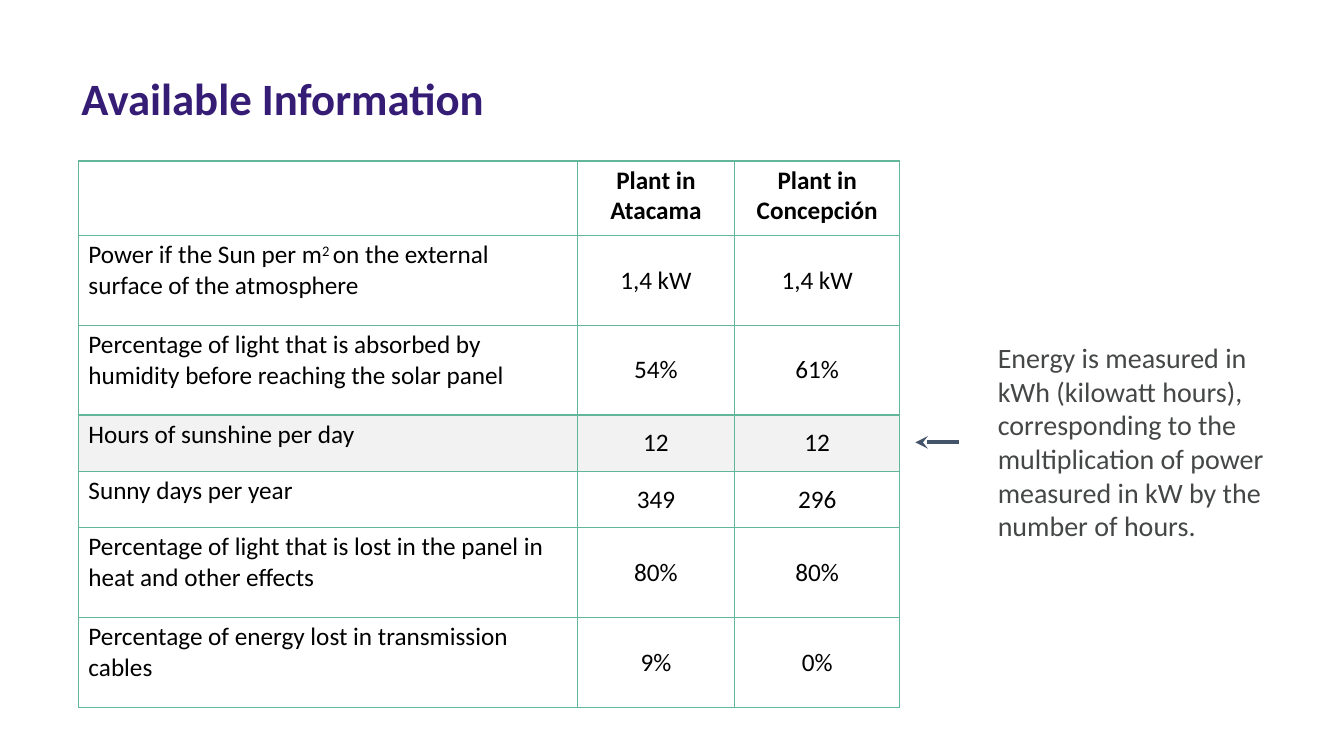
"""Build a slide with a table of solar plant data and a note on energy units."""
from lxml import etree
from pptx import Presentation
from pptx import util as u
from pptx.dml.color import RGBColor
from pptx.enum import shapes, text
from pptx.oxml.ns import qn

FONT = "Calibri"
BORDER = "62B799"
HIGHLIGHT = "F2F2F2"
HIGHLIGHTED_ROW = 3
COLUMN_WIDTHS = [356.4, 112.3, 118.1]
ROW_HEIGHTS = [53.3, 64.1, 64.1, 40.3, 40.3, 64.1, 64.1]
ROWS = [
    ("", "Plant in Atacama", "Plant in Concepción"),
    (["Power if the Sun per m", "2 ", "on the external surface of the atmosphere"],
     "1,4 kW", "1,4 kW"),
    ("Percentage of light that is absorbed by humidity before reaching the solar panel",
     "54%", "61%"),
    ("Hours of sunshine per day", "12", "12"),
    ("Sunny days per year", "349", "296"),
    ("Percentage of light that is lost in the panel in heat and other effects",
     "80%", "80%"),
    ("Percentage of energy lost in transmission cables", "9%", "0%"),
]
NOTE = ("Energy is measured in kWh (kilowatt hours), corresponding to the "
        "multiplication of power measured in kW by the number of hours.")


def color(hex_string):
    return RGBColor.from_string(hex_string)


def apply(target, values):
    for name, value in values.items():
        setattr(target, name, value)


def write(paragraph, content, size, hex_color, bold=False, align=text.PP_ALIGN.LEFT):
    paragraph.alignment = align
    apply(paragraph.font, {"name": FONT, "size": u.Pt(size), "bold": bold})
    paragraph.font.color.rgb = color(hex_color)
    pieces = [content] if isinstance(content, str) else content
    for index, piece in enumerate(pieces):
        run = paragraph.add_run()
        run.text = piece
        apply(run.font, {"name": FONT, "size": u.Pt(size), "bold": bold})
        run.font.color.rgb = color(hex_color)
        if index == 1:
            run.font._element.set("baseline", "30000")


def fill_text_box(shape, box, content, size, hex_color, bold=False):
    apply(shape, dict(zip(("left", "top", "width", "height"), map(u.Pt, box))))
    apply(shape.text_frame, {
        "word_wrap": True,
        "auto_size": text.MSO_AUTO_SIZE.SHAPE_TO_FIT_TEXT,
        "vertical_anchor": text.MSO_ANCHOR.TOP,
    })
    write(shape.text_frame.paragraphs[0], content, size, hex_color, bold)


def add_borders(cell):
    properties = cell._tc.get_or_add_tcPr()
    for side in ("a:lnL", "a:lnR", "a:lnT", "a:lnB"):
        line = etree.SubElement(properties, qn(side), w=str(u.Pt(1)))
        fill = etree.SubElement(line, qn("a:solidFill"))
        etree.SubElement(fill, qn("a:srgbClr"), val=BORDER)


def format_cell(cell, content, row, column):
    add_borders(cell)
    if row == HIGHLIGHTED_ROW:
        cell.fill.solid()
        cell.fill.fore_color.rgb = color(HIGHLIGHT)
    else:
        cell.fill.background()
    is_value = row > 0 and column > 0
    apply(cell, {
        "margin_left": u.Pt(7.2), "margin_right": u.Pt(7.2),
        "margin_top": u.Pt(2.9), "margin_bottom": u.Pt(2.9),
        "vertical_anchor": text.MSO_ANCHOR.MIDDLE if is_value else text.MSO_ANCHOR.TOP,
    })
    align = text.PP_ALIGN.CENTER if column else text.PP_ALIGN.LEFT
    write(cell.text_frame.paragraphs[0], content, 18, "000000", row == 0, align)


def add_data_table(slide, left, top):
    frame = slide.shapes.add_table(
        len(ROWS), len(COLUMN_WIDTHS), u.Pt(left), u.Pt(top),
        u.Pt(sum(COLUMN_WIDTHS)), u.Pt(sum(ROW_HEIGHTS)))
    table = frame.table
    apply(table, {"first_row": False, "horz_banding": False})
    for column, width in zip(table.columns, COLUMN_WIDTHS):
        column.width = u.Pt(width)
    for row, height in zip(table.rows, ROW_HEIGHTS):
        row.height = u.Pt(height)
    for row, contents in enumerate(ROWS):
        for column, content in enumerate(contents):
            format_cell(table.cell(row, column), content, row, column)


def add_arrow(slide, start, end, y, hex_color, width):
    arrow = slide.shapes.add_connector(
        shapes.MSO_CONNECTOR.STRAIGHT, u.Pt(start), u.Pt(y), u.Pt(end), u.Pt(y))
    arrow.line.width = u.Pt(width)
    arrow.line.color.rgb = color(hex_color)
    etree.SubElement(arrow.line._get_or_add_ln(), qn("a:tailEnd"), type="stealth")
    etree.SubElement(arrow._element.spPr, qn("a:effectLst"))


def main():
    presentation = Presentation()
    apply(presentation, {"slide_width": u.Pt(960), "slide_height": u.Pt(540)})
    slide = presentation.slides.add_slide(presentation.slide_layouts[5])
    fill_text_box(slide.shapes.title, (51, 46.8, 618.5, 46), "Available Information",
                  32, "351C75", True)
    add_data_table(slide, 56, 115)
    note = slide.shapes.add_textbox(0, 0, 0, 0)
    fill_text_box(note, (705.6, 239.8, 226.8, 152.6), NOTE, 20, "444746")
    add_arrow(slide, 684.7, 653.8, 316, "44546A", 3)
    presentation.save("out.pptx")


if __name__ == "__main__":
    main()
